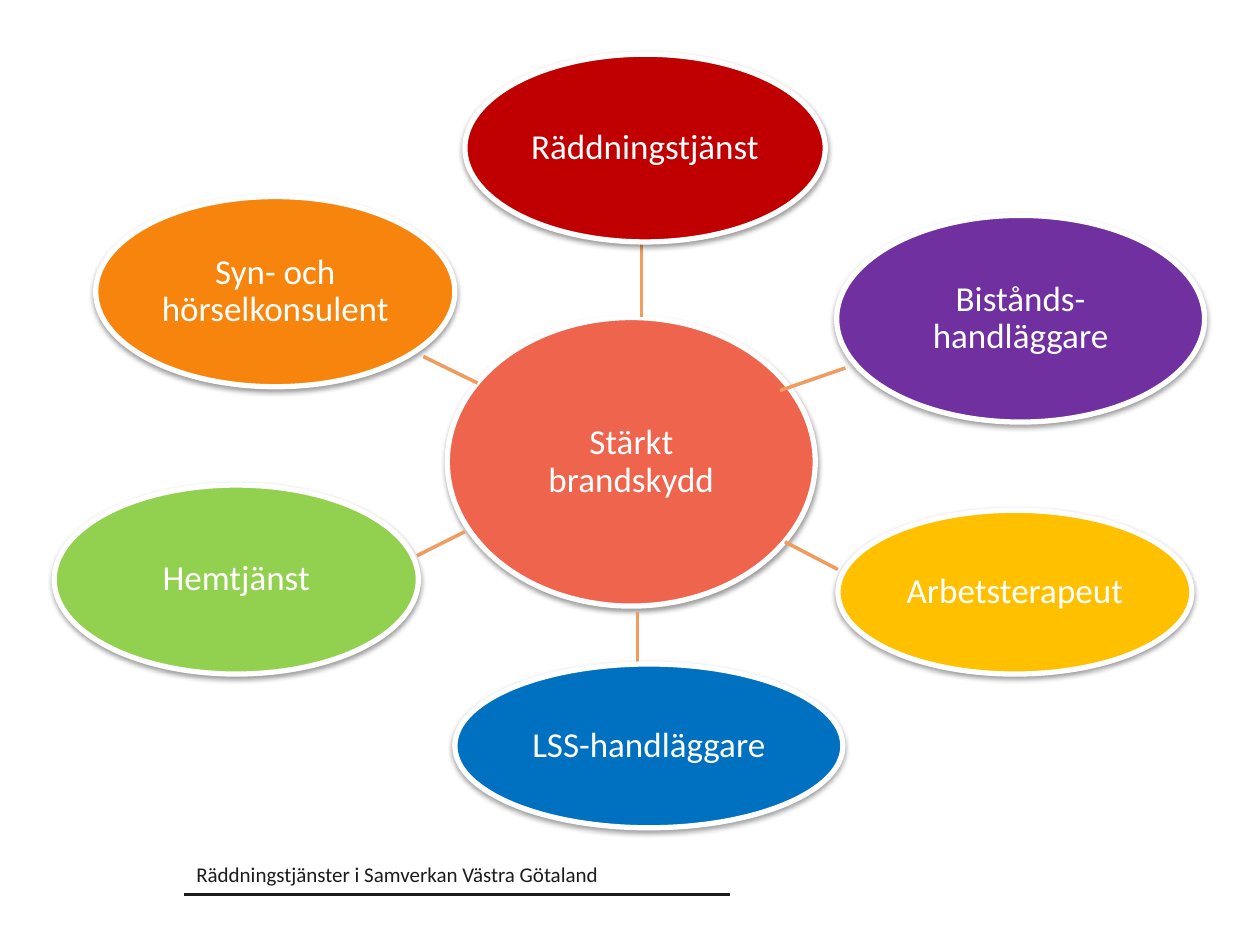
from lxml import etree
from pptx import Presentation
from pptx import util as u
from pptx.dml.color import RGBColor
from pptx.enum import shapes, text
from pptx.oxml import ns

COLORS = {
    "ink": "1C1C1C", "white": "FFFFFF", "spoke": "EF9C5E", "shadow": "000000",
    "coral": "EF644D", "red": "C00000", "purple": "7030A0", "amber": "FFC000",
    "blue": "0070C0", "green": "92D050", "orange": "F6840D",
}
FONT = "Calibri"
COLUMNS, ROWS = 100, 75
DECK_WIDTH, DECK_HEIGHT = u.Inches(10), u.Inches(7.5)

# Boxes are left, top, width, height in columns and rows of the grid.
HUB = ("Stärkt brandskydd", "coral", (35.5, 25.2, 29.2, 22.9))
# Each role: label, colour, box, spoke start, spoke end.
ROLES = [
    ("Räddningstjänst", "red", (36.9, 4.3, 28.6, 14.9), (50.9, 25.2), (50.9, 18.8)),
    ("Bistånds-handläggare", "purple", (66.4, 17.1, 29.2, 16.4), (67.1, 29.2), (61.9, 31)),
    ("Arbetsterapeut", "amber", (66.5, 40.5, 28.1, 13), (62.3, 43), (66.5, 45.2)),
    ("LSS-handläggare", "blue", (36.1, 52.7, 30.8, 13), (50.6, 48.6), (50.6, 53.2)),
    ("Hemtjänst", "green", (4.3, 38.5, 28.9, 15), (33.1, 44.1), (36.9, 42.2)),
    ("Syn- och hörselkonsulent", "orange", (7.6, 15.6, 28.5, 15.1), (37.9, 30.4), (33.6, 28.3)),
]
FOOTER = (14.6, 67.9, 43.3, 3.1)


def rgb(name):
    return RGBColor.from_string(COLORS[name])


def across(columns):
    return round(DECK_WIDTH * columns / COLUMNS)


def down(rows):
    return round(DECK_HEIGHT * rows / ROWS)


def place(box):
    left, top, width, height = box
    return across(left), down(top), across(width), down(height)


def add_effects(shape):
    return etree.SubElement(shape._element.spPr, ns.qn("a:effectLst"))


def add_soft_shadow(shape):
    shadow = etree.SubElement(
        add_effects(shape), ns.qn("a:outerShdw"),
        blurRad=str(u.Pt(3.1)), dist=str(u.Pt(1.6)), dir="5400000", rotWithShape="0")
    color = etree.SubElement(shadow, ns.qn("a:srgbClr"), val=COLORS["shadow"])
    etree.SubElement(color, ns.qn("a:alpha"), val="38000")


def add_line(page, start, end, color, weight):
    line = page.shapes.add_connector(
        shapes.MSO_CONNECTOR.STRAIGHT,
        across(start[0]), down(start[1]), across(end[0]), down(end[1]))
    line.line.color.rgb = rgb(color)
    line.line.width = u.Pt(weight)
    add_effects(line)


def add_span(para, words, size, color):
    span = para.add_run()
    span.text = words
    span.font.name = FONT
    span.font.size = u.Pt(size)
    span.font.color.rgb = rgb(color)


def add_bubble(page, label, color, box):
    bubble = page.shapes.add_shape(shapes.MSO_SHAPE.OVAL, *place(box))
    bubble.fill.solid()
    bubble.fill.fore_color.rgb = rgb(color)
    bubble.line.color.rgb = rgb("white")
    bubble.line.width = u.Pt(3)
    add_soft_shadow(bubble)
    frame = bubble.text_frame
    frame.word_wrap = True
    frame.vertical_anchor = text.MSO_ANCHOR.MIDDLE
    frame.margin_left = frame.margin_right = u.Inches(0.04)
    frame.margin_top = frame.margin_bottom = u.Inches(0.01)
    para = frame.paragraphs[0]
    para.alignment = text.PP_ALIGN.CENTER
    para.line_spacing = 0.9
    add_span(para, label, 20, "white")


def add_footer(page, box):
    """Place the network's name above a rule along the foot of the box."""
    left, top, width, height = box
    add_line(page, (left, top + height), (left + width, top + height), "ink", 1.5)
    name = page.shapes.add_textbox(*place((left, top, 0.84 * width, 3)))
    name.text_frame.word_wrap = True
    name.text_frame.auto_size = text.MSO_AUTO_SIZE.SHAPE_TO_FIT_TEXT
    add_span(name.text_frame.paragraphs[0],
             "Räddningstjänster i Samverkan Västra Götaland", 12, "ink")


def add_wheel(page):
    add_bubble(page, *HUB)
    for label, color, box, start, end in ROLES:
        add_line(page, start, end, "spoke", 2)
        add_bubble(page, label, color, box)


def main():
    deck = Presentation()
    deck.slide_width, deck.slide_height = DECK_WIDTH, DECK_HEIGHT
    page = deck.slides.add_slide(deck.slide_layouts[6])
    add_footer(page, FOOTER)
    add_wheel(page)
    deck.save("out.pptx")


if __name__ == "__main__":
    main()
